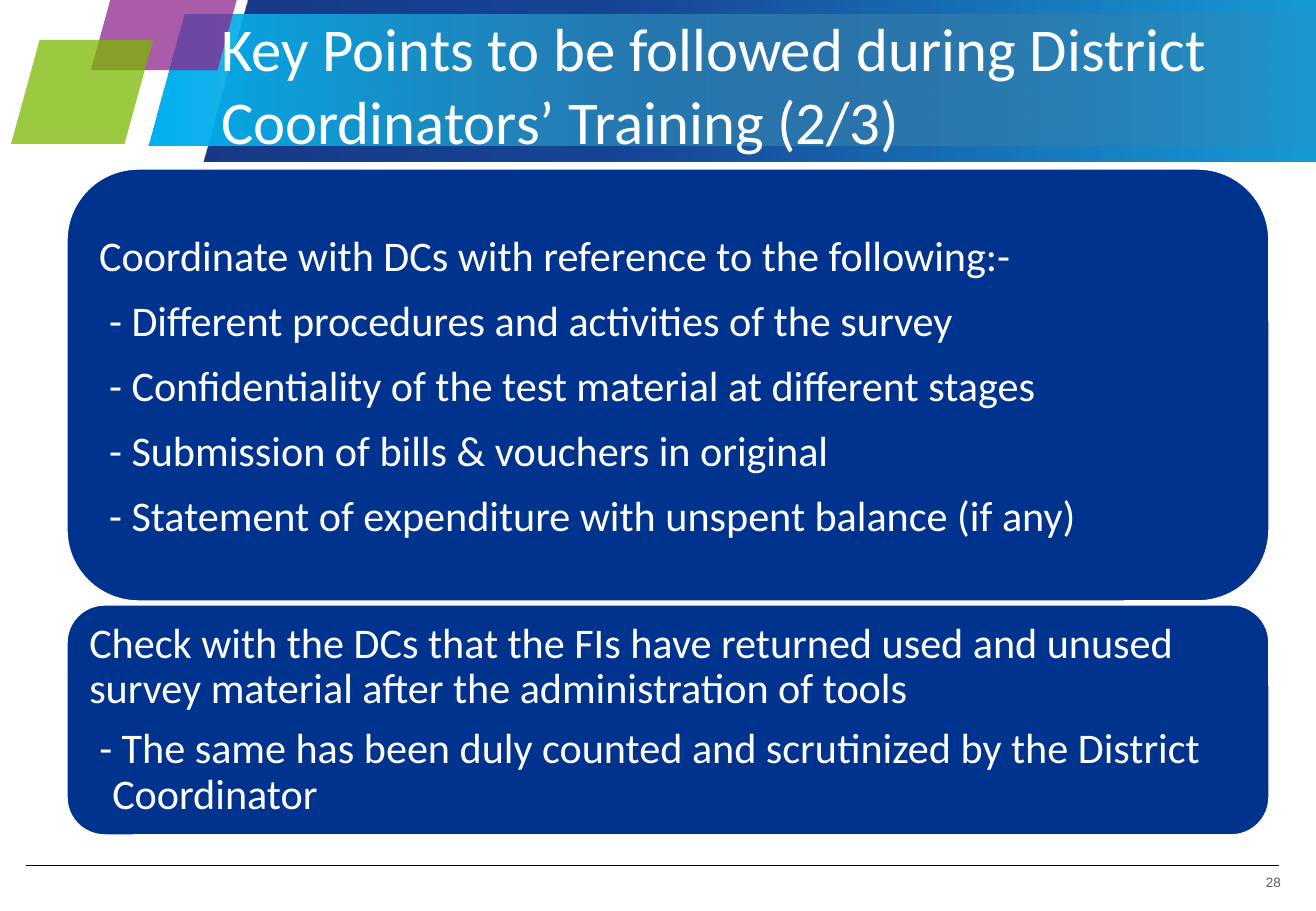
from lxml import etree
from pptx import Presentation
from pptx import util as u
from pptx.dml.color import RGBColor
from pptx.enum import shapes, text
from pptx.oxml.ns import qn

PX = u.Inches(1) / 121.5
COLORS = {
    "navy": "00257A", "blue": "00338D", "sky": "009FDA", "cyan": "00B0F0",
    "gray": "7A7A7A", "purple": "8E258D", "green": "7AB800",
    "white": "FFFFFF", "black": "000000", "dim": "595959",
}


def px(*lengths):
    return [round(length * PX) for length in lengths]


def write(para, words, size=25, font="Calibri", color="white",
          align=text.PP_ALIGN.LEFT, spacing=1.0, after=0, margin=0, indent=0):
    """Fill a paragraph; margin and indent are px, size and after are points."""
    para.alignment = align
    para.line_spacing = spacing
    para.space_before = u.Pt(0)
    para.space_after = u.Pt(after)
    left, first = px(margin, indent)
    para._p.get_or_add_pPr().set("marL", str(left))
    para._p.get_or_add_pPr().set("indent", str(first))
    span = para.add_run()
    span.text = words
    span.font.size = u.Pt(size)
    span.font.name = font
    span.font.color.rgb = RGBColor.from_string(COLORS[color])


deck = Presentation()
deck.slide_width, deck.slide_height = px(1316, 911)
slide = deck.slides.add_slide(deck.slide_layouts[5])

# Header bars: place, rotation, gradient angle, stops of (percent, colour, opacity)
bars = [
    ((204, -1, 1213, 163), 0, 0, [(0, "navy", 90), (35, "blue", 90), (100, "sky", 90)]),
    ((148, 15, 1239, 131), 180, 180, [(0, "cyan", 100), (100, "gray", 0)]),
    ((91, -70, 165, 140), 0, 0, [(0, "purple", 75)]),
    ((11, 40, 142, 104), 180, 0, [(0, "green", 75)]),
]
for place, rotation, angle, stops in bars:
    bar = slide.shapes.add_shape(shapes.MSO_SHAPE.PARALLELOGRAM, *px(*place))
    bar.adjustments[0] = 0.275
    bar.rotation = rotation
    bar.shadow.inherit = False
    bar.line.fill.background()
    if len(stops) == 1:
        _, color, opacity = stops[0]
        bar.fill.solid()
        bar.fill.fore_color.rgb = RGBColor.from_string(COLORS[color])
        tone = bar._element.spPr.find(qn("a:solidFill"))[0]
        etree.SubElement(tone, qn("a:alpha"), val=str(opacity * 1000))
        continue
    bar.fill.gradient()
    bar.fill.gradient_angle = angle
    stop_list = bar._element.spPr.find(".//" + qn("a:gsLst"))
    stop_list[:] = []
    for percent, color, opacity in stops:
        stop = etree.SubElement(stop_list, qn("a:gs"), pos=str(percent * 1000))
        tone = etree.SubElement(stop, qn("a:srgbClr"), val=COLORS[color])
        etree.SubElement(tone, qn("a:alpha"), val=str(opacity * 1000))

# Footer rule and page number
rule = slide.shapes.add_connector(shapes.MSO_CONNECTOR.STRAIGHT, *px(26, 865, 1279, 865))
rule.line.color.rgb = RGBColor.from_string(COLORS["black"])
rule.line.width = u.Pt(0.25)
etree.SubElement(rule._element.spPr, qn("a:effectLst"))

number = slide.shapes.add_textbox(*px(1208, 864, 73, 38)).text_frame
number.word_wrap = True
number.margin_left, number.margin_top, number.margin_right, number.margin_bottom = px(10, 10, 0, 0)
write(number.paragraphs[0], "28", size=8, font="Arial", color="dim",
      align=text.PP_ALIGN.RIGHT)

# Key points: top, height, line spacing, lines of (words, margin, indent)
points = [
    (168, 434, 1.0, [
        ("Coordinate with DCs with reference to the following:-", 0, 0),
        ("- Different procedures and activities of the survey", 10, 0),
        ("- Confidentiality of the test material at different stages", 10, 0),
        ("- Submission of bills & vouchers in original", 10, 0),
        ("- Statement of expenditure with unspent balance (if any)", 10, 0),
    ]),
    (604, 232, 0.9, [
        ("Check with the DCs that the FIs have returned used and unused "
         "survey material after the administration of tools", 0, 0),
        ("- The same has been duly counted and scrutinized by the District "
         "Coordinator", 23, -13),
    ]),
]
for top, height, spacing, lines in points:
    box = slide.shapes.add_shape(shapes.MSO_SHAPE.ROUNDED_RECTANGLE,
                                 *px(66, top, 1204, height))
    box.shadow.inherit = False
    box.fill.solid()
    box.fill.fore_color.rgb = RGBColor.from_string(COLORS["blue"])
    box.line.color.rgb = RGBColor.from_string(COLORS["white"])
    box.line.width = u.Pt(2)
    frame = box.text_frame
    frame.word_wrap = True
    frame.vertical_anchor = text.MSO_ANCHOR.MIDDLE
    frame.margin_left, frame.margin_top, frame.margin_right, frame.margin_bottom = px(12, 12, 12, 12)
    for index, (words, margin, indent) in enumerate(lines):
        para = frame.add_paragraph() if index else frame.paragraphs[0]
        write(para, words, spacing=spacing, after=8.5, margin=margin, indent=indent)

# Title, in front of the header bars
title = slide.shapes.title
title.left, title.top, title.width, title.height = px(209, 1, 1185, 166)
title.text_frame.word_wrap = True
title.text_frame.auto_size = text.MSO_AUTO_SIZE.NONE
title.text_frame.vertical_anchor = text.MSO_ANCHOR.MIDDLE
write(title.text_frame.paragraphs[0],
      "Key Points to be followed during District Coordinators’ Training (2/3)", size=36)
slide.shapes._spTree.append(title._element)

deck.save("out.pptx")
